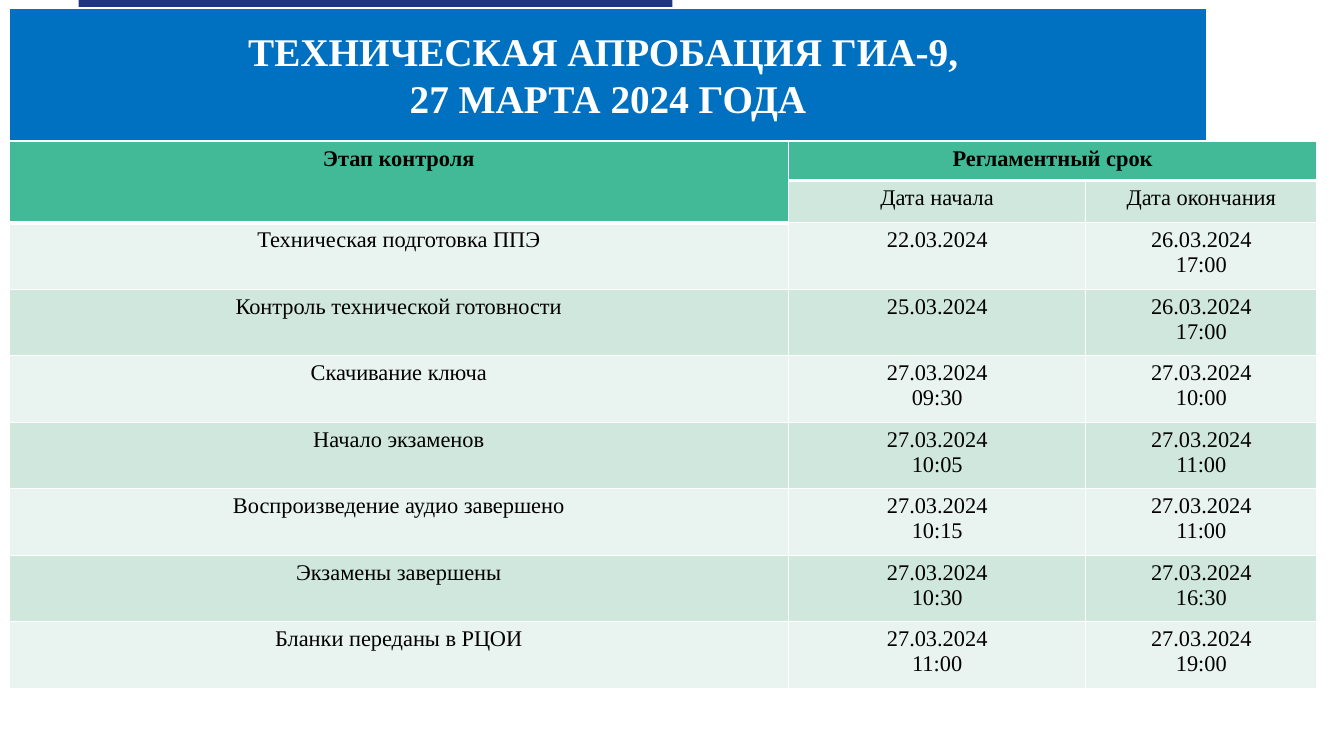
from lxml import etree
from pptx import Presentation
from pptx.dml.color import RGBColor
from pptx.enum.shapes import MSO_SHAPE
from pptx.enum.text import MSO_ANCHOR, MSO_AUTO_SIZE, PP_ALIGN
from pptx.oxml.ns import qn
from pptx.util import Inches, Pt

CENTER = PP_ALIGN.CENTER
MIDDLE = MSO_ANCHOR.MIDDLE
NO_AUTOFIT = MSO_AUTO_SIZE.NONE
RECT = MSO_SHAPE.RECTANGLE

TITLE = ["ТЕХНИЧЕСКАЯ АПРОБАЦИЯ ГИА-9, ", "27 МАРТА 2024 ГОДА"]
HEADER = [
    ("Этап контроля", "Регламентный срок", ""),
    ("", "Дата начала", "Дата окончания"),
]
STAGES = [
    ("Техническая подготовка ППЭ", "22.03.2024", "26.03.2024\n17:00"),
    ("Контроль технической готовности", "25.03.2024", "26.03.2024\n17:00"),
    ("Скачивание ключа", "27.03.2024\n09:30", "27.03.2024\n10:00"),
    ("Начало экзаменов", "27.03.2024\n10:05", "27.03.2024\n11:00"),
    ("Воспроизведение аудио завершено", "27.03.2024\n10:15", "27.03.2024\n11:00"),
    ("Экзамены завершены", "27.03.2024\n10:30", "27.03.2024\n16:30"),
    ("Бланки переданы в РЦОИ", "27.03.2024\n11:00", "27.03.2024\n19:00"),
]
COLORS = {
    "bar": "1E3584", "banner": "0070C0", "header": "42BA97",
    "dark": "CFE7DD", "light": "E9F3EF", "white": "FFFFFF", "black": "000000",
}
FONT = "Times New Roman"
LEFT, BANNER_TOP, TABLE_TOP = 0.09, 0.08, 1.4
COLS = [7.73, 2.95, 2.29]
ROWS = [0.39, 0.42] + [0.66] * len(STAGES)


def rgb(name):
    return RGBColor.from_string(COLORS[name])


def paint(shape, name):
    shape.fill.solid()
    shape.fill.fore_color.rgb = rgb(name)


def write(tf, lines, size=16, color="black", bold=False):
    for i, line in enumerate(lines):
        p = tf.paragraphs[0] if i == 0 else tf.add_paragraph()
        p.alignment = CENTER
        r = p.add_run()
        r.text = line
        r.font.name = FONT
        r.font.size = Pt(size)
        r.font.bold = bold
        r.font.color.rgb = rgb(color)


def border(cell, **widths):
    tcPr = cell._tc.get_or_add_tcPr()
    for side in "LRTB":
        ln = etree.SubElement(tcPr, qn(f"a:ln{side}"), w=str(Pt(widths.get(side, 1))))
        fill = etree.SubElement(ln, qn("a:solidFill"))
        etree.SubElement(fill, qn("a:srgbClr"), val=COLORS["white"])


def add_banner(s):
    bar = s.shapes.add_shape(RECT, Inches(0.78), 0, Inches(5.89), Inches(0.4))
    bar.shadow.inherit = False
    paint(bar, "bar")
    bar.line.fill.background()

    title = s.shapes.title
    bar.element.addnext(title.element)
    title.left, title.top = Inches(LEFT), Inches(BANNER_TOP)
    title.width, title.height = Inches(11.88), Inches(TABLE_TOP - BANNER_TOP)
    paint(title, "banner")
    title.line.color.rgb = rgb("white")
    title.line.width = Pt(1.5)
    tf = title.text_frame
    tf.word_wrap = True
    tf.auto_size = NO_AUTOFIT
    tf.vertical_anchor = MIDDLE
    write(tf, TITLE, size=28, color="white", bold=True)


def add_schedule(s):
    rows = HEADER + STAGES
    table = s.shapes.add_table(
        len(ROWS), len(COLS), Inches(LEFT), Inches(TABLE_TOP),
        Inches(sum(COLS)), Inches(sum(ROWS))).table
    for col, width in zip(table.columns, COLS):
        col.width = Inches(width)
    for row, height in zip(table.rows, ROWS):
        row.height = Inches(height)
    table.cell(0, 0).merge(table.cell(1, 0))
    table.cell(0, 1).merge(table.cell(0, 2))
    for i, row in enumerate(rows):
        for j, text in enumerate(row):
            cell = table.cell(i, j)
            heading = i == 0 or (i == 1 and j == 0)
            below = i == (2 if j == 0 else 1)
            border(cell, T=3 if below else 1, B=3 if heading else 1)
            paint(cell, "header" if heading else "dark" if i % 2 else "light")
            if text:
                write(cell.text_frame, text.split("\n"), bold=heading)


def main():
    prs = Presentation()
    prs.slide_width, prs.slide_height = Inches(13.33), Inches(7.5)
    s = prs.slides.add_slide(prs.slide_layouts[5])
    add_banner(s)
    add_schedule(s)
    prs.save("out.pptx")


if __name__ == "__main__":
    main()
